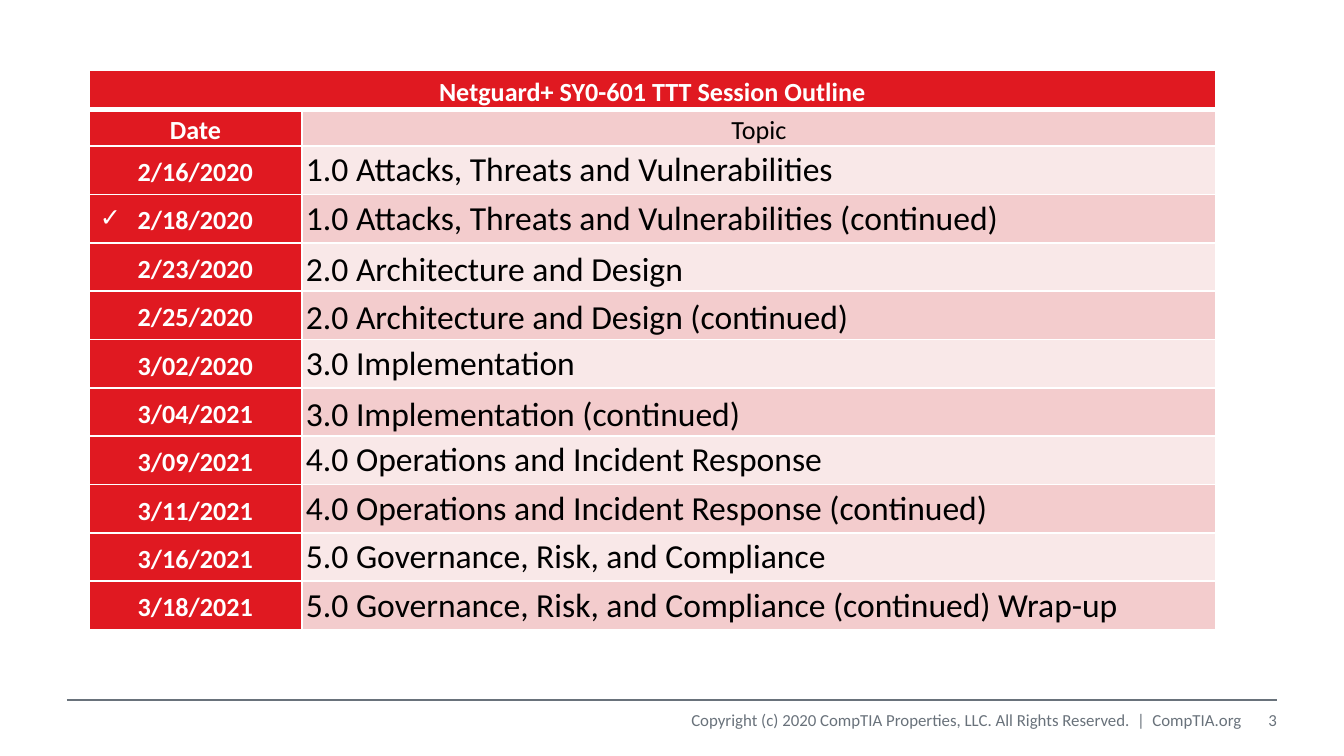
from lxml import etree
from pptx import Presentation
from pptx.dml.color import RGBColor
from pptx.enum.shapes import MSO_CONNECTOR
from pptx.enum.text import MSO_ANCHOR, MSO_AUTO_SIZE, PP_ALIGN
from pptx.oxml.ns import qn
from pptx.util import Pt

LEFT, CENTER, RIGHT = PP_ALIGN.LEFT, PP_ALIGN.CENTER, PP_ALIGN.RIGHT
TOP, MIDDLE = MSO_ANCHOR.TOP, MSO_ANCHOR.MIDDLE
GROW = MSO_AUTO_SIZE.SHAPE_TO_FIT_TEXT
STRAIGHT = MSO_CONNECTOR.STRAIGHT

RED = RGBColor(0xE0, 0x19, 0x21)
PINK = RGBColor(0xF3, 0xCC, 0xCD)
PALE_PINK = RGBColor(0xF9, 0xE8, 0xE8)
GRAY = RGBColor(0x69, 0x72, 0x7B)
WHITE = RGBColor(0xFF, 0xFF, 0xFF)
BLACK = RGBColor(0x00, 0x00, 0x00)

FONT = "Calibri"
EMU_PER_PX = 9144000 / 1344
LOOSE = 1.15

TITLE = "Netguard+ SY0-601 TTT Session Outline"
COPYRIGHT = (
    "Copyright (c) 2020 CompTIA Properties, LLC. All Rights Reserved.  |  CompTIA.org"
)
SESSIONS = [
    ("2/16/2020", "1.0 Attacks, Threats and Vulnerabilities", None),
    ("2/18/2020", "1.0 Attacks, Threats and Vulnerabilities (continued)", None),
    ("2/23/2020", "2.0 Architecture and Design", LOOSE),
    ("2/25/2020", "2.0 Architecture and Design (continued)", LOOSE),
    ("3/02/2020", "3.0 Implementation", None),
    ("3/04/2021", "3.0 Implementation (continued)", LOOSE),
    ("3/09/2021", "4.0 Operations and Incident Response", None),
    ("3/11/2021", "4.0 Operations and Incident Response (continued)", None),
    ("3/16/2021", "5.0 Governance, Risk, and Compliance", None),
    ("3/18/2021", "5.0 Governance, Risk, and Compliance (continued) Wrap-up", None),
]


def px(length):
    """Turn pixels into EMU."""
    return round(length * EMU_PER_PX)


def write(frame, text, size, color, bold=False, align=LEFT, spacing=None):
    """Write one run into the first paragraph of a text frame."""
    paragraph = frame.paragraphs[0]
    paragraph.alignment = align
    if spacing:
        paragraph.line_spacing = spacing
    run = paragraph.add_run()
    run.text = text
    run.font.name = FONT
    run.font.size = Pt(size)
    run.font.bold = bold
    run.font.color.rgb = color


def set_margins(target, left, top, right, bottom):
    """Set the insets of a cell or text frame."""
    target.margin_left, target.margin_top = px(left), px(top)
    target.margin_right, target.margin_bottom = px(right), px(bottom)


def add_borders(cell, bottom_width):
    """Draw white borders around a cell."""
    properties = cell._tc.get_or_add_tcPr()
    widths = {"a:lnL": 1, "a:lnR": 1, "a:lnT": 1, "a:lnB": bottom_width}
    for index, (tag, width) in enumerate(widths.items()):
        border = etree.Element(qn(tag), w=str(Pt(width)))
        fill = etree.SubElement(border, qn("a:solidFill"))
        etree.SubElement(fill, qn("a:srgbClr"), val=str(WHITE))
        properties.insert(index, border)


def fill_cell(cell, text, fill, size, color, bold, align, spacing, bottom_width=1):
    """Style a table cell and write its text."""
    cell.fill.solid()
    cell.fill.fore_color.rgb = fill
    cell.vertical_anchor = MIDDLE
    set_margins(cell, 4, 0, 4, 0)
    add_borders(cell, bottom_width)
    write(cell.text_frame, text, size, color, bold, align, spacing)


def add_text(slide, left, top, width, height, margins, anchor, wrap):
    """Add an empty text box and return its text frame."""
    frame = slide.shapes.add_textbox(px(left), px(top), px(width), px(height)).text_frame
    frame.word_wrap = wrap
    frame.vertical_anchor = anchor
    set_margins(frame, *margins)
    return frame


def add_outline(slide, left, top, width, height):
    """Add the session table with a check mark beside the second date."""
    title_height, heading_height, date_width = 40, 32, 213
    body_height = height - title_height - heading_height
    table = slide.shapes.add_table(
        len(SESSIONS) + 2, 2, px(left), px(top), px(width), px(height)
    ).table
    table.first_row = table.horz_banding = False
    table.columns[0].width = px(date_width)
    table.columns[1].width = px(width - date_width)
    table.rows[0].height = px(title_height)
    table.rows[1].height = px(heading_height)

    title = table.cell(0, 0)
    title.merge(table.cell(0, 1))
    fill_cell(title, TITLE, RED, 14, WHITE, True, CENTER, LOOSE, 3)
    add_borders(table.cell(0, 1), 3)
    fill_cell(table.cell(1, 0), "Date", RED, 14, WHITE, True, CENTER, LOOSE)
    fill_cell(table.cell(1, 1), "Topic", PINK, 14, BLACK, False, CENTER, LOOSE)

    for row, (date, topic, spacing) in enumerate(SESSIONS, start=2):
        table.rows[row].height = px(body_height / len(SESSIONS))
        band = PINK if row % 2 else PALE_PINK
        fill_cell(table.cell(row, 0), date, RED, 14, WHITE, True, CENTER, LOOSE)
        fill_cell(table.cell(row, 1), topic, band, 18, BLACK, False, LEFT, spacing)

    check = add_text(slide, left - 2, top + 124, 47, 44, (13, 7, 13, 7), TOP, False)
    check.auto_size = GROW
    write(check, "✓", 13.5, WHITE)


def add_footer(slide, left, top, width, height):
    """Add the footer rule, copyright line and page number."""
    number_width, copyright_width = 36, 735
    right = left + width
    rule = slide.shapes.add_connector(STRAIGHT, px(left), px(top), px(right), px(top))
    rule.line.color.rgb = GRAY
    rule.line.width = Pt(1)
    etree.SubElement(rule._element.spPr, qn("a:effectLst"))

    number_left = right - number_width
    copyright_left = number_left - copyright_width
    for text, box_left, box_width, inset in (
        (COPYRIGHT, copyright_left, copyright_width, 0),
        ("3", number_left, number_width, 13),
    ):
        margins = (inset, 7, 0, 7)
        frame = add_text(slide, box_left, top, box_width, height, margins, MIDDLE, True)
        write(frame, text, 9, GRAY, align=RIGHT)


def main():
    """Build and save the session outline slide."""
    deck = Presentation()
    deck.slide_width, deck.slide_height = px(1344), px(756)
    slide = deck.slides.add_slide(deck.slide_layouts[6])
    add_footer(slide, 67, 700, 1210, 40)
    add_outline(slide, 89, 70, 1127, 556)
    deck.save("out.pptx")


if __name__ == "__main__":
    main()
